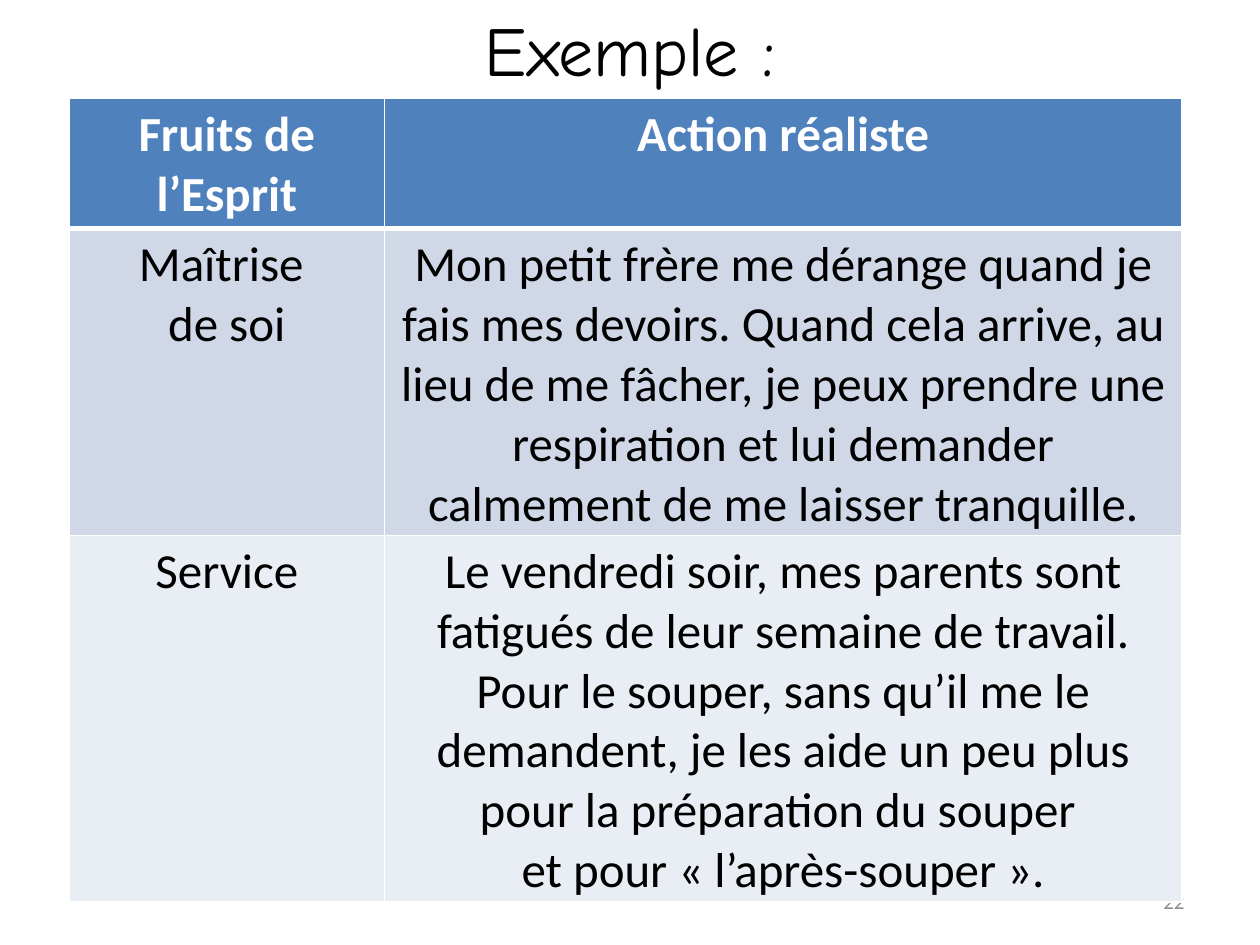
from pptx import Presentation
from pptx.dml.color import RGBColor
from pptx.enum.text import MSO_ANCHOR, PP_ALIGN
from pptx.util import Inches, Pt
from lxml.etree import SubElement
from pptx.oxml.ns import qn

COLORS = {
    "white": "FFFFFF",
    "black": "000000",
    "gray": "8C8C8C",
    "header": "4F81BD",
    "band_dark": "D0D8E8",
    "band_light": "E9EDF4",
}

ROWS = [
    ("Fruits de l’Esprit", "Action réaliste"),
    (
        "Maîtrise \nde soi",
        "Mon petit frère me dérange quand je fais mes devoirs. "
        "Quand cela arrive, au lieu de me fâcher, je peux prendre une "
        "respiration et lui demander calmement de me laisser tranquille.",
    ),
    (
        "Service",
        "Le vendredi soir, mes parents sont fatigués de leur semaine de "
        "travail. Pour le souper, sans qu’il me le demandent, je les aide "
        "un peu plus pour la préparation du souper \n"
        "et pour « l’après-souper ».",
    ),
]


class SlideBuilder:
    font = "Calibri"

    def __init__(self, slide):
        self.s = slide

    def style(self, tf, size, color, align, font=None, bold=False):
        for p in tf.paragraphs:
            p.alignment = align
            for r in p.runs:
                r.font.name = font or self.font
                r.font.size = Pt(size)
                r.font.bold = bold
                r.font.color.rgb = RGBColor.from_string(COLORS[color])

    def text(self, text, box, size, color, align, font=None, anchor=MSO_ANCHOR.TOP):
        sp = self.s.shapes.add_textbox(*map(Inches, box))
        tf = sp.text_frame
        tf.word_wrap = True
        tf.vertical_anchor = anchor
        tf.text = text
        self.style(tf, size, color, align, font)

    def border(self, cell, side, width):
        tcPr = cell._tc.get_or_add_tcPr()
        ln = SubElement(tcPr, qn(f"a:ln{side}"), w=str(Pt(width)))
        fill = SubElement(ln, qn("a:solidFill"))
        SubElement(fill, qn("a:srgbClr"), val=COLORS["white"])

    def table(self, rows, left, top, widths, heights, fills, size):
        box = map(Inches, (left, top, sum(widths), sum(heights)))
        tbl = self.s.shapes.add_table(len(rows), len(widths), *box).table
        for col, width in zip(tbl.columns, widths):
            col.width = Inches(width)
        for i, (row, height, fill) in enumerate(zip(rows, heights, fills)):
            tbl.rows[i].height = Inches(height)
            for j, text in enumerate(row):
                cell = tbl.cell(i, j)
                cell.text_frame.text = text
                color = "white" if i == 0 else "black"
                self.style(cell.text_frame, size, color, PP_ALIGN.CENTER, bold=i == 0)
                top_width = 3 if i == 1 else 1
                bottom_width = 3 if i == 0 else 1
                for side, width in zip("LRTB", (1, 1, top_width, bottom_width)):
                    self.border(cell, side, width)
                cell.fill.solid()
                cell.fill.fore_color.rgb = RGBColor.from_string(COLORS[fill])


def main():
    prs = Presentation()
    prs.slide_width, prs.slide_height = Inches(10), Inches(7.5)
    b = SlideBuilder(prs.slides.add_slide(prs.slide_layouts[6]))
    b.text("22", (7.17, 6.95, 2.33, 0.4), 12, "gray", PP_ALIGN.RIGHT,
           anchor=MSO_ANCHOR.MIDDLE)
    b.text("Exemple :", (0, 0, 10, 0.77), 40, "black", PP_ALIGN.CENTER, "Comic Neue")
    b.table(ROWS, 0.55, 0.78, (2.5, 6.33), (1.03, 2.43, 2.91),
            ("header", "band_dark", "band_light"), 28)
    prs.save("out.pptx")


if __name__ == "__main__":
    main()
